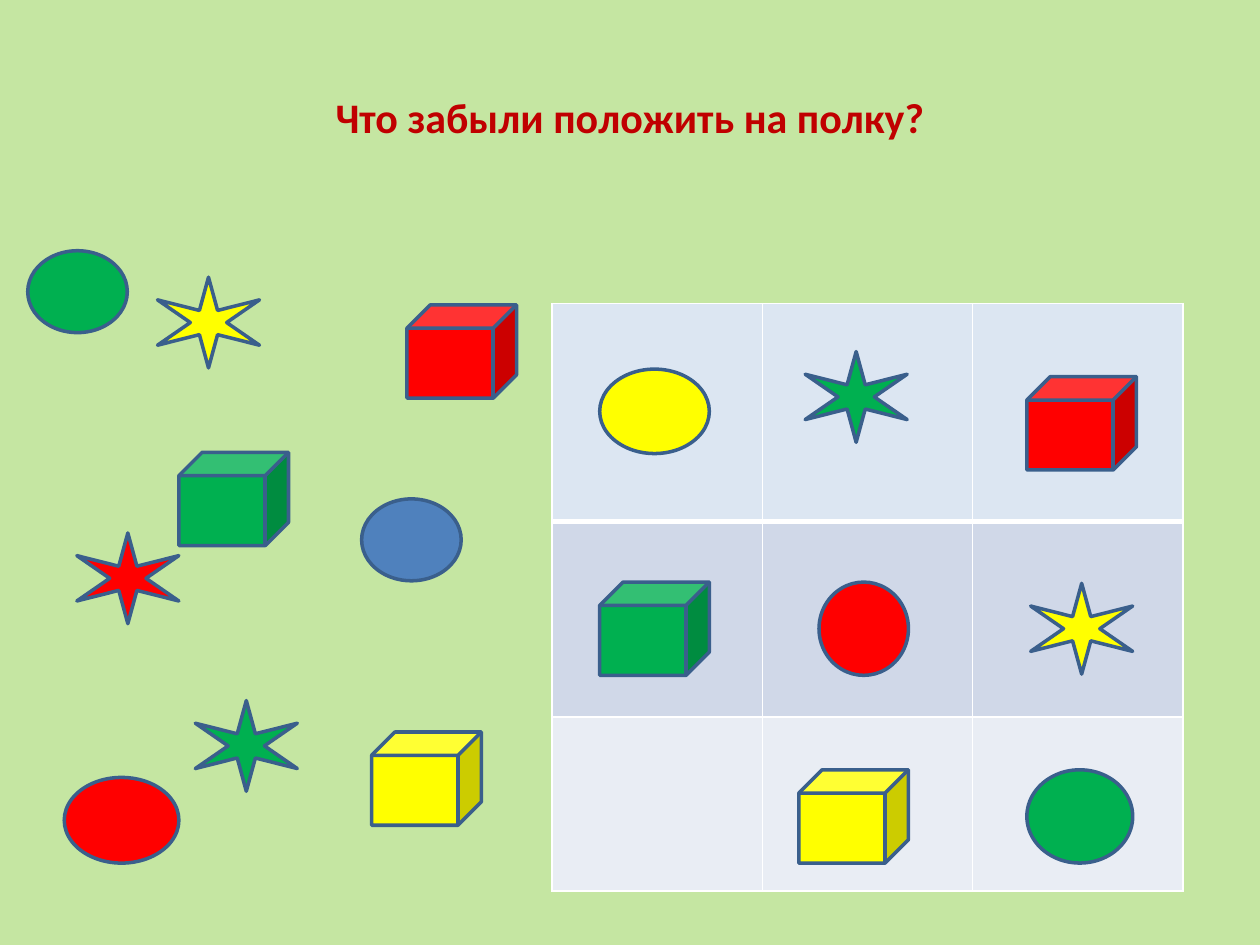
from lxml.etree import SubElement as Sub
from pptx import Presentation
from pptx.dml.color import RGBColor
from pptx.enum.shapes import MSO_SHAPE as Kind
from pptx.enum.text import MSO_ANCHOR as Anchor, PP_ALIGN as Align
from pptx.oxml.ns import qn
from pptx.util import Inches, Pt

BACK = RGBColor(0xC5, 0xE6, 0xA2)
TITLE = RGBColor(0xC0, 0x00, 0x00)
EDGE = RGBColor(0x3A, 0x5F, 0x8C)
WHITE = RGBColor(0xFF, 0xFF, 0xFF)
RED = RGBColor(0xFF, 0x00, 0x00)
GREEN = RGBColor(0x00, 0xB0, 0x50)
YELLOW = RGBColor(0xFF, 0xFF, 0x00)
BLUE = RGBColor(0x4F, 0x81, 0xBD)
BANDS = [
    RGBColor(0xDC, 0xE6, 0xF2),
    RGBColor(0xD0, 0xD8, 0xE8),
    RGBColor(0xE9, 0xED, 0xF4),
]
ROWS = [1.73, 1.55, 1.38]
COLS = [1.67] * 3

CUBES = [
    (8.15, 2.99, RED), (4.76, 4.62, GREEN), (6.34, 6.11, YELLOW),
    (1.42, 3.59, GREEN), (2.95, 5.81, YELLOW), (3.23, 2.42, RED),
]
STARS = [
    (6.39, 2.79, GREEN), (8.18, 4.63, YELLOW), (0.61, 4.23, RED),
    (1.25, 2.2, YELLOW), (1.55, 5.56, GREEN),
]
OVALS = [
    (4.76, 2.93, 0.87, 0.67, YELLOW), (6.5, 4.62, 0.71, 0.74, RED),
    (8.15, 6.11, 0.84, 0.74, GREEN), (2.87, 3.96, 0.79, 0.65, BLUE),
    (0.51, 6.17, 0.91, 0.68, RED), (0.22, 1.99, 0.79, 0.65, GREEN),
]


def write(frame, text, size=24, color=TITLE, bold=True, font="Calibri", align=Align.CENTER):
    """Put formatted text into a frame."""
    frame.word_wrap = True
    frame.vertical_anchor = Anchor.MIDDLE
    para = frame.paragraphs[0]
    para.alignment = align
    run = para.add_run()
    run.text = text
    run.font.size = Pt(size)
    run.font.bold = bold
    run.font.name = font
    run.font.color.rgb = color


def place(shape, left, top, width, height):
    """Move and size a shape in inches."""
    shape.left, shape.top = Inches(left), Inches(top)
    shape.width, shape.height = Inches(width), Inches(height)


def add_toy(slide, kind, left, top, width, height, color):
    """Add one outlined toy and return it."""
    toy = slide.shapes.add_shape(
        kind, Inches(left), Inches(top), Inches(width), Inches(height))
    toy.shadow.inherit = False
    toy.fill.solid()
    toy.fill.fore_color.rgb = color
    toy.line.color.rgb = EDGE
    toy.line.width = Pt(2)
    return toy


def add_edge(cell, side, width):
    """Draw one white border of a cell."""
    props = cell._tc.get_or_add_tcPr()
    line = Sub(props, qn(f"a:ln{side}"), w=str(Pt(width)))
    fill = Sub(line, qn("a:solidFill"))
    Sub(fill, qn("a:srgbClr"), val=str(WHITE))


def add_shelf(slide, left, top):
    """Add the shelf as a table with banded rows."""
    table = slide.shapes.add_table(
        len(ROWS), len(COLS), Inches(left), Inches(top),
        Inches(sum(COLS)), Inches(sum(ROWS))).table
    for col, width in zip(table.columns, COLS):
        col.width = Inches(width)
    for r, (height, color) in enumerate(zip(ROWS, BANDS)):
        table.rows[r].height = Inches(height)
        for c in range(len(COLS)):
            cell = table.cell(r, c)
            for side in "LRTB":
                thick = (r, side) in [(0, "B"), (1, "T")]
                add_edge(cell, side, 3 if thick else 1)
            cell.fill.solid()
            cell.fill.fore_color.rgb = color


def main():
    """Build the slide and save it."""
    deck = Presentation()
    deck.slide_width, deck.slide_height = Inches(10), Inches(7.5)
    slide = deck.slides.add_slide(deck.slide_layouts[5])
    slide.background.fill.solid()
    slide.background.fill.fore_color.rgb = BACK
    title = slide.shapes.title
    place(title, 0.5, 0.3, 9, 1.25)
    write(title.text_frame, "Что забыли положить на полку?")
    add_shelf(slide, 4.38, 2.41)
    for oval in OVALS:
        add_toy(slide, Kind.OVAL, *oval)
    for left, top, color in CUBES:
        add_toy(slide, Kind.CUBE, left, top, 0.87, 0.74, color)
    for left, top, color in STARS:
        star = add_toy(slide, Kind.STAR_6_POINT, left, top, 0.81, 0.72, color)
        star.adjustments[0] = 0.154
    deck.save("out.pptx")


if __name__ == "__main__":
    main()
